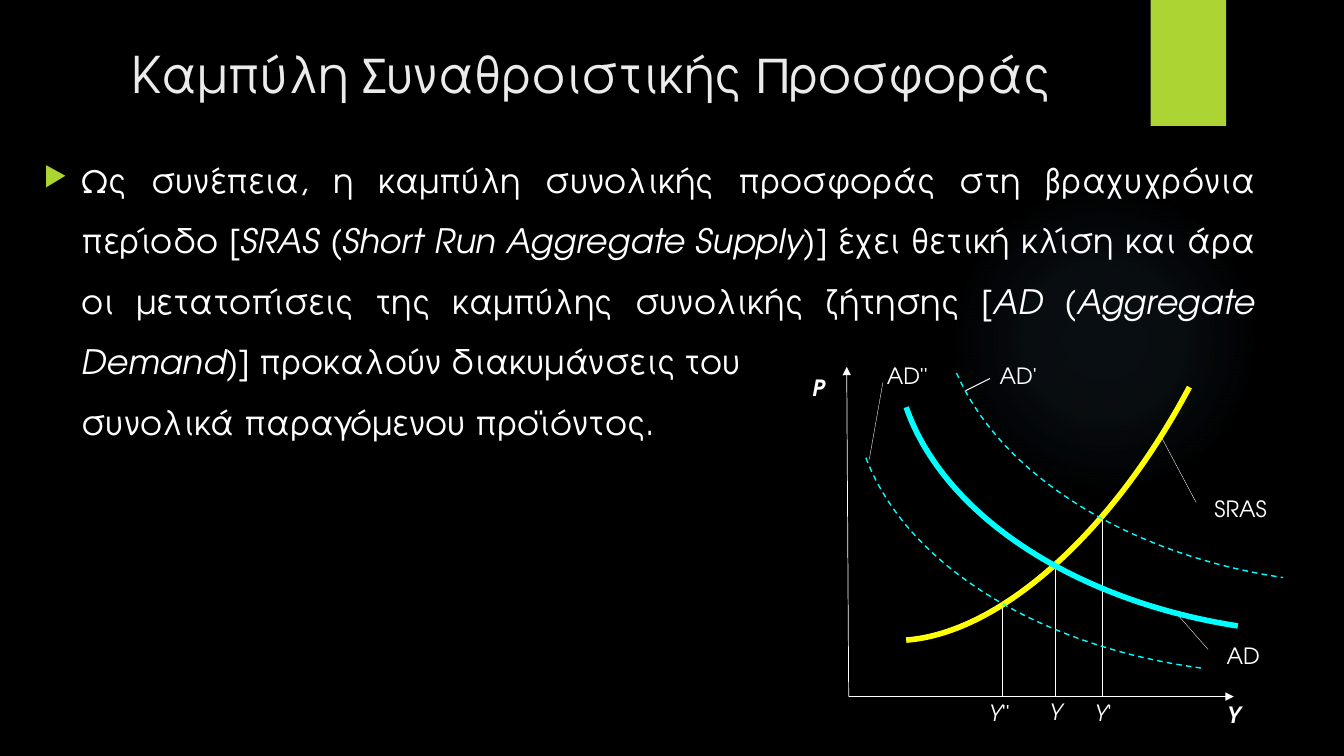
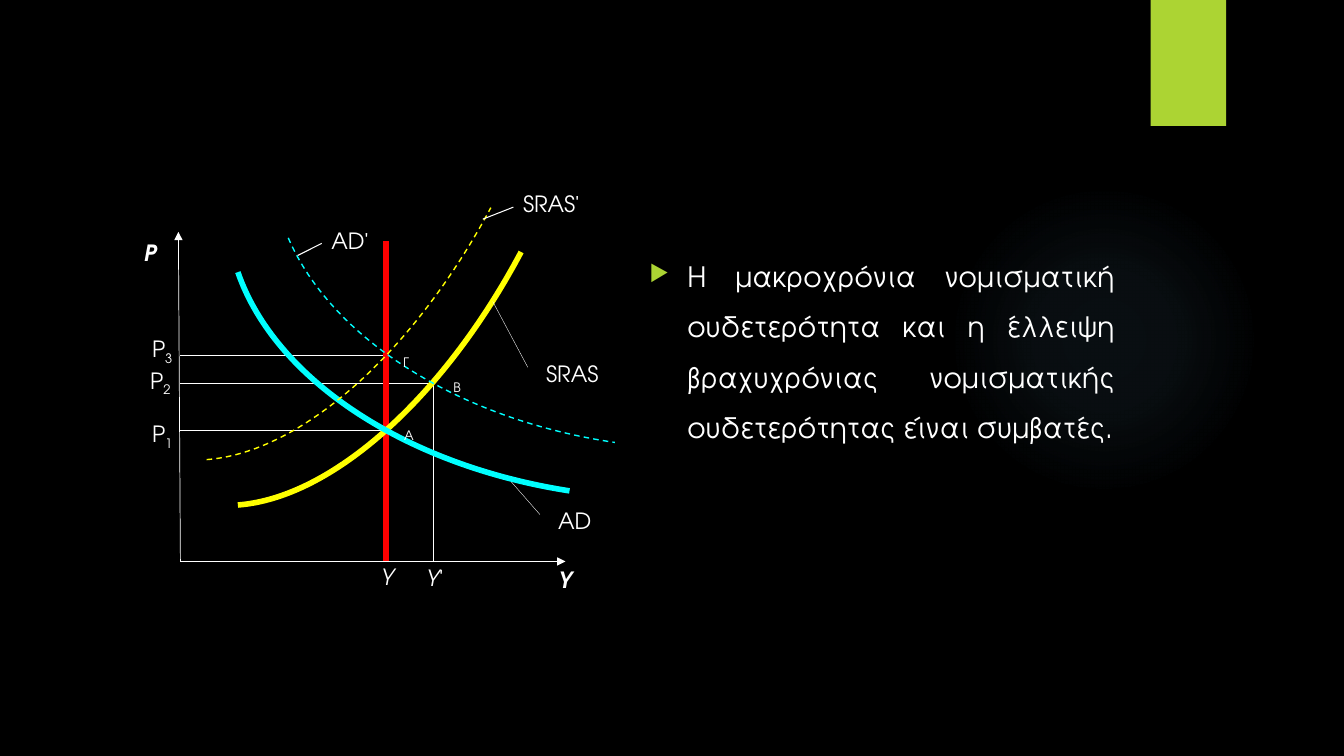
from lxml.etree import SubElement
from pptx import Presentation
from pptx.dml.color import RGBColor
from pptx.enum.dml import MSO_LINE as Dash
from pptx.enum.shapes import MSO_CONNECTOR as Connector, MSO_SHAPE as Preset
from pptx.enum.text import MSO_ANCHOR as Anchor, MSO_AUTO_SIZE as AutoSize, PP_ALIGN as Align
from pptx.oxml.ns import qn
from pptx.util import Emu, Pt

FONT = "TeX Gyre Adventor"
BLACK, WHITE, TITLE_GREY = "000000", "FFFFFF", "EBEBEB"
GREEN, CYAN, YELLOW, RED, GLOW = "ACD433", "00FFFF", "FFFF00", "FF0000", "7AC4F0"
color = RGBColor.from_string

presentation = Presentation()
presentation.slide_width, presentation.slide_height = Emu(12192000), Emu(6858000)
CELL = presentation.slide_height / 75


def style_line(shape, line_color, width, dash=None, arrow=False):
    shape.line.color.rgb = color(line_color)
    shape.line.width = Pt(width)
    if dash:
        shape.line.dash_style = dash
    properties = shape._element.spPr
    if arrow:
        SubElement(properties.find(qn("a:ln")), qn("a:tailEnd"), type="triangle")
    SubElement(properties, qn("a:effectLst"))


def write(paragraph, pieces, size, text_color=WHITE):
    for text, style in pieces:
        run = paragraph.add_run()
        run.text = text
        run.font.name, run.font.size = FONT, Pt(size)
        run.font.color.rgb = color(text_color)
        run.font.bold, run.font.italic = "b" in style, "i" in style
        if "s" in style:
            run._r.get_or_add_rPr().set("baseline", "-25000")


master = presentation.slide_master
master.background.fill.solid()
master.background.fill.fore_color.rgb = color(BLACK)
title_slide = presentation.slides.add_slide(presentation.slide_layouts[5])
text_slide = presentation.slides.add_slide(presentation.slide_layouts[6])

glow = title_slide.shapes.add_shape(
    Preset.OVAL, *[Emu(round(n * CELL)) for n in (94.1, 18.3, 30.8, 30.8)])
band = title_slide.shapes.add_shape(
    Preset.RECTANGLE, *[Emu(round(n * CELL)) for n in (114.15, 0, 7.5, 12.5)])
for position, shape in enumerate((glow, band), 2):
    shape.fill.solid()
    shape.fill.fore_color.rgb = color(GREEN)
    shape.line.fill.background()
    shape.shadow.inherit = False
    master.shapes._spTree.insert(position, shape._element)

solid = glow._element.spPr.find(qn("a:solidFill"))
gradient = SubElement(glow._element.spPr, qn("a:gradFill"), rotWithShape="1")
glow._element.spPr.replace(solid, gradient)
stops = SubElement(gradient, qn("a:gsLst"))
for position, opacity in ((0, 7), (36, 6), (69, 0)):
    stop = SubElement(stops, qn("a:gs"), pos=str(position * 1000))
    stop_color = SubElement(stop, qn("a:srgbClr"), val=GLOW)
    SubElement(stop_color, qn("a:alpha"), val=str(opacity * 1000))
circle = SubElement(gradient, qn("a:path"), path="circle")
SubElement(circle, qn("a:fillToRect"), l="50000", t="50000", r="50000", b="50000")

title = title_slide.shapes.title
title.left, title.top, title.width, title.height = [
    Emu(round(n * CELL)) for n in (7.05, 3.65, 103.2, 7.2)]
title.text_frame.auto_size = AutoSize.NONE
title.text_frame.vertical_anchor = Anchor.MIDDLE
title.text_frame.paragraphs[0].alignment = Align.CENTER
write(title.text_frame.paragraphs[0], [("Καμπύλη Συναθροιστικής Προσφοράς", "")], 36, TITLE_GREY)

supply_text = [
    ("Ως συνέπεια, η καμπύλη συνολικής προσφοράς στη βραχυχρόνια περίοδο [", ""),
    ("SRAS (Short Run Aggregate Supply", "i"),
    (")] έχει θετική κλίση και άρα οι μετατοπίσεις της καμπύλης συνολικής ζήτησης [", ""),
    ("AD (Aggregate Demand", "i"),
    (")] προκαλούν διακυμάνσεις του ", ""),
]
neutrality_text = [(
    "Η μακροχρόνια νομισματική ουδετερότητα και η έλλειψη βραχυχρόνιας "
    "νομισματικής ουδετερότητας είναι συμβατές.", "")]
bodies = [
    (title_slide, (3.35, 13.35, 122.2, 49.7), 24,
     [supply_text, [("συνολικά παραγόμενου προϊόντος.", "")]]),
    (text_slide, (63.45, 23.6, 48.1, 24), 20, [neutrality_text]),
]
for slide, area, size, paragraphs in bodies:
    body = slide.shapes.add_textbox(*[Emu(round(n * CELL)) for n in area])
    body.text_frame.word_wrap = True
    for index, pieces in enumerate(paragraphs):
        paragraph = body.text_frame.add_paragraph() if index else body.text_frame.paragraphs[0]
        paragraph.alignment = Align.JUSTIFY
        paragraph.line_spacing = 1.5
        indent = round(3.75 * CELL)
        properties = paragraph._p.get_or_add_pPr()
        properties.set("marL", str(indent))
        if index == 0:
            properties.set("indent", str(-indent))
            bullet_color = SubElement(properties, qn("a:buClr"))
            SubElement(bullet_color, qn("a:srgbClr"), val=GREEN)
            SubElement(properties, qn("a:buSzPct"), val="80000")
            SubElement(properties, qn("a:buFont"), typeface="OpenSymbol")
            SubElement(properties, qn("a:buChar"), char="▶")
        write(paragraph, pieces, size)

shared_lines = [
    (0, 0, 38.2, 0, WHITE, 0.5, None, True),
    (0, 0, -0.2, -32.7, WHITE, 0.5, None, True),
    (25.1, -17.7, 25.1, 0, WHITE, 0.25, Dash.ROUND_DOT),
]
shared_curves = [
    (((5.7, -5.6), (15, -6.3), (26.1, -16.2), (33.8, -30.7)), YELLOW, 4),
    (((5.7, -28.7), (9.4, -18), (22.4, -9.5), (38.6, -7)), CYAN, 4),
    (((10.7, -32.1), (15, -22.1), (27.6, -14.1), (43.1, -11.8)), CYAN, 1, Dash.DASH),
]
thin_pointer = (0.444, -0.072, -1.889, -0.372)
short_pointer = (0.599, 0.003, 0.93, -0.307)
shared_callouts = [
    ("SRAS", (35.3, -20.5, 11.6, 2.8), thin_pointer, 0.25),
    ("AD", (36.5, -5.9, 8.4, 3.6), (0.346, -0.1, -0.553, -0.437), 0.25),
    ("AD΄", (14, -33.7, 7.7, 3.6), short_pointer, 0.75),
]
shared_labels = [
    ([("Y", "bi")], (36.5, 0, 4.7, 4)),
    ([("P", "bi")], (-7.7, -32.5, 6.3, 5.2)),
    ([("Y΄", "i")], (23.4, -0.2, 4.7, 4)),
    ([("Y", "i")], (18.9, -0.3, 4.7, 4)),
]
charts = [
    (title_slide, (84.2, 69.1),
     [(x, y, x, 0, WHITE, 0.25, Dash.ROUND_DOT) for x, y in ((15.2, -9.1), (20.5, -13.1))],
     [(((1.7, -23.7), (5.7, -13.1), (18.9, -4.9), (35.2, -2.8)), CYAN, 1, Dash.DASH)],
     [("AD΄΄", (2.8, -33.7, 9.3, 2.8), (0.907, 0.064, 3.639, -0.082), 0.25)],
     [([("Y΄΄", "i")], (12.9, -0.2, 5.9, 4))]),
    (text_slide, (17.9, 55.7),
     [(0, y, x, y, WHITE, 0.25, Dash.ROUND_DOT)
      for x, y in ((20.4, -20.5), (24.8, -17.7), (20.4, -13))]
     + [(20.4, -31.8, 20.4, 0, RED, 4)],
     [(((2.6, -10.1), (12, -10.8), (23.1, -20.7), (30.8, -35.1)), YELLOW, 1, Dash.DASH)],
     [("SRAS΄", (33, -37.3, 9.8, 3.6), short_pointer, 0.75)],
     [([("P", ""), (digit, "s")], (x, y, 5.9, 4))
      for digit, x, y in (("1", -3.8, -14.5), ("2", -4, -19.8), ("3", -3.8, -22.9))]
     + [([(point, "s")], (x, y, 5.9, 4))
        for point, x, y in (("A", 21.2, -15.3), ("B", 26.1, -20), ("Γ", 21.1, -22.5))]),
]

for slide, (origin_x, origin_y), lines, curves, callouts, labels in charts:
    for x1, y1, x2, y2, *style in lines + shared_lines:
        ends = (origin_x + x1, origin_y + y1, origin_x + x2, origin_y + y2)
        line = slide.shapes.add_connector(
            Connector.STRAIGHT, *[Emu(round(n * CELL)) for n in ends])
        style_line(line, *style)

    for controls, *style in shared_curves + curves:
        points = [(round((origin_x + x) * CELL), round((origin_y + y) * CELL))
                  for x, y in controls]
        builder = slide.shapes.build_freeform(*points[0])
        builder.add_line_segments(points[1:], close=False)
        curve = builder.convert_to_shape()
        outline = next(curve._element.iter(qn("a:path")))
        segments = outline.findall(qn("a:lnTo"))
        bezier = SubElement(outline, qn("a:cubicBezTo"))
        for segment in segments:
            bezier.append(segment[0])
            outline.remove(segment)
        curve.fill.background()
        style_line(curve, *style)

    for text, (x, y, width, height), pointer, weight in shared_callouts + callouts:
        area = (origin_x + x, origin_y + y, width, height)
        callout = slide.shapes.add_shape(
            Preset.LINE_CALLOUT_1_NO_BORDER, *[Emu(round(n * CELL)) for n in area])
        for index, value in enumerate(pointer):
            callout.adjustments[index] = value
        callout.fill.background()
        style_line(callout, WHITE, weight)
        callout.text_frame.vertical_anchor = Anchor.TOP
        callout.text_frame.paragraphs[0].alignment = Align.LEFT
        write(callout.text_frame.paragraphs[0], [(text, "")], 16)

    for pieces, (x, y, width, height) in shared_labels + labels:
        area = (origin_x + x, origin_y + y, width, height)
        label = slide.shapes.add_textbox(*[Emu(round(n * CELL)) for n in area])
        label.text_frame.word_wrap = True
        paragraph = label.text_frame.paragraphs[0]
        paragraph.alignment = Align.RIGHT if pieces == [("P", "bi")] else Align.LEFT
        write(paragraph, pieces, 16)

presentation.save("out.pptx")
